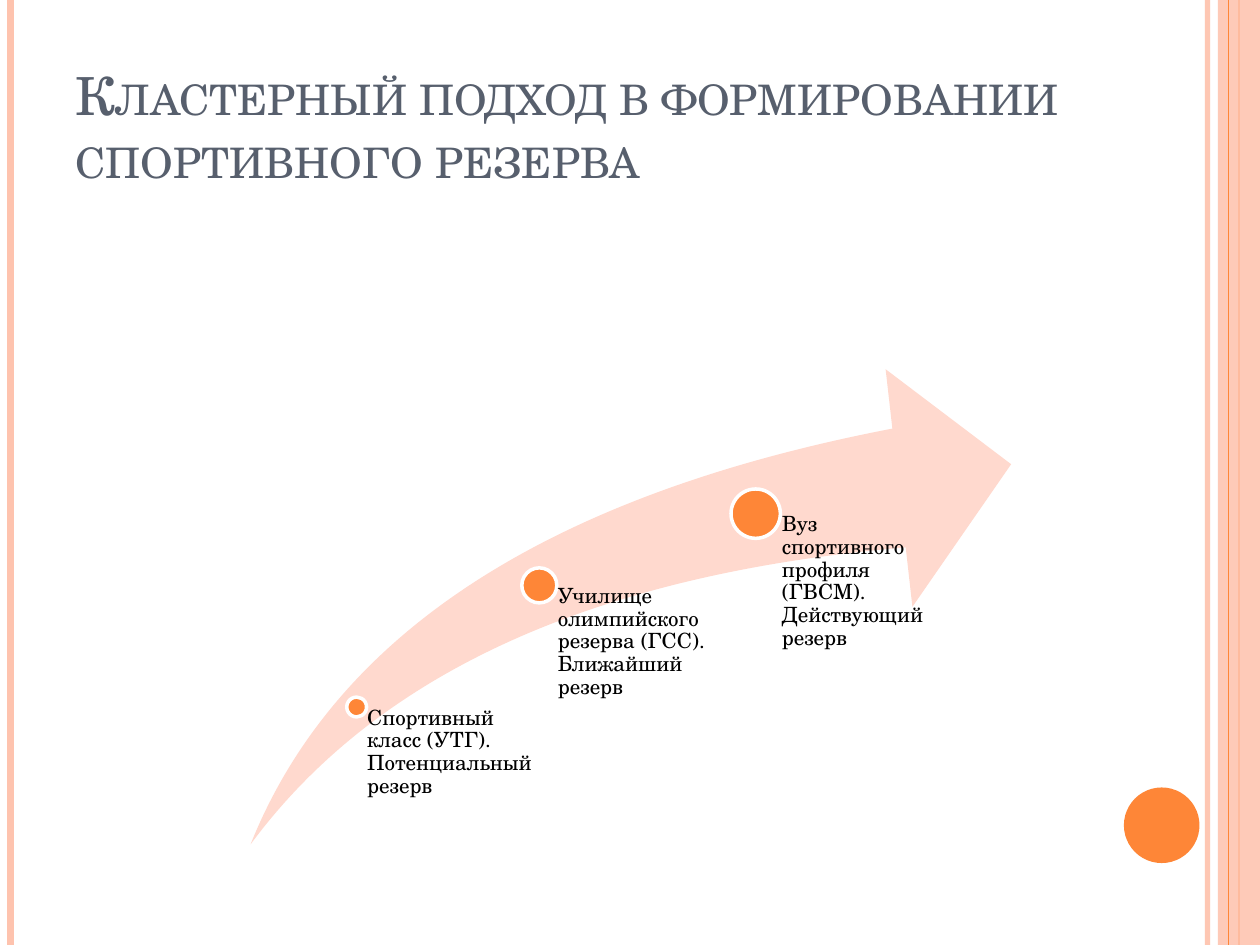
import pptx
import pptx.dml.color
import pptx.enum.shapes
import pptx.enum.text
import pptx.oxml
import pptx.oxml.ns
import pptx.oxml.xmlchemy
import pptx.util

Pt = pptx.util.Pt
RGBColor = pptx.dml.color.RGBColor
MSO_SHAPE = pptx.enum.shapes.MSO_SHAPE
qn = pptx.oxml.ns.qn

ORANGE = RGBColor(0xFE, 0x86, 0x37)
PEACH = RGBColor(0xFE, 0xC3, 0xAE)
PALE = RGBColor(0xFF, 0xD9, 0xCE)
SLATE = RGBColor(0x57, 0x5F, 0x6D)
BLACK = RGBColor(0, 0, 0)
WHITE = RGBColor(255, 255, 255)
FONT = "TeX Gyre Schola"
W, H = 720, 540

prs = pptx.Presentation()
prs.slide_width, prs.slide_height = Pt(W), Pt(H)
s = prs.slides.add_slide(prs.slide_layouts[5])


def set_alpha(sp, percent):
    """Make the first solid colour of a shape or line partly transparent."""
    clr = next(sp._element.spPr.iter(qn("a:srgbClr")))
    clr.append(pptx.oxml.parse_xml(
        '<a:alpha xmlns:a="http://schemas.openxmlformats.org/drawingml/2006/main"'
        f' val="{percent * 1000}"/>'))


def add_filled(kind, x, y, w, h, color, outline=None):
    sp = s.shapes.add_shape(kind, Pt(x), Pt(y), Pt(w), Pt(h))
    sp.shadow.inherit = False
    sp.fill.solid()
    sp.fill.fore_color.rgb = color
    if outline is None:
        sp.line.fill.background()
    else:
        sp.line.color.rgb = outline
        sp.line.width = Pt(2)
    return sp


# Side stripes; the band lies over the first three lines
stripes = [(690, PEACH, 3, 93), (6, PEACH, 4.5, 100), (708, ORANGE, 1.5, 100),
           "band", (702, ORANGE, 0.75, 100)]
for stripe in stripes:
    if stripe == "band":
        band = add_filled(MSO_SHAPE.RECTANGLE, 696, 0, 24, H, PEACH)
        set_alpha(band, 87)
        continue
    x, color, width, alpha = stripe
    line = s.shapes.add_connector(
        pptx.enum.shapes.MSO_CONNECTOR.STRAIGHT, Pt(x), 0, Pt(x), Pt(H))
    line.line.color.rgb = color
    line.line.width = Pt(width)
    line._element.spPr.append(pptx.oxml.xmlchemy.OxmlElement("a:effectLst"))
    if alpha < 100:
        set_alpha(line, alpha)

add_filled(MSO_SHAPE.OVAL, 642.25, 450, 43.2, 43.2, ORANGE)

# Rising arrow with three stages
ARROW_BOTTOM = 482.5
arrow = add_filled(MSO_SHAPE.SWOOSH_ARROW, 143.2, 211, 434.6, 271.5, PALE)
arrow.adjustments[0] = arrow.adjustments[1] = 0.25

# Dot centre, dot diameter, text width, text inset, text
stages = [
    (203.8, 404, 11.3, 101.5, 6, "Спортивный класс (УТГ). Потенциальный резерв"),
    (308.2, 334.5, 20, 104.4, 10.6, "Училище олимпийского резерва (ГСС). Ближайший резерв"),
    (431.8, 293.5, 28.2, 104.4, 15, "Вуз спортивного профиля (ГВСМ). Действующий резерв"),
]
for x, y, d, width, inset, text in stages:
    add_filled(MSO_SHAPE.OVAL, x - d / 2, y - d / 2, d, d, ORANGE, WHITE)
    box = s.shapes.add_textbox(Pt(x), Pt(y), Pt(width), Pt(ARROW_BOTTOM - y))
    tf = box.text_frame
    frame_format = {"word_wrap": True, "margin_left": Pt(inset), "margin_top": 0,
                    "margin_right": 0, "margin_bottom": 0}
    for name, value in frame_format.items():
        setattr(tf, name, value)
    p = tf.paragraphs[0]
    p.line_spacing = 0.9
    r = p.add_run()
    r.text = text
    for name, value in {"name": FONT, "size": Pt(12)}.items():
        setattr(r.font, name, value)
    r.font.color.rgb = BLACK

title = s.shapes.title
place = {"left": Pt(36), "top": Pt(21.6), "width": Pt(588), "height": Pt(90)}
for name, value in place.items():
    setattr(title, name, value)
tf = title.text_frame
tf.word_wrap = True
tf.auto_size = pptx.enum.text.MSO_AUTO_SIZE.NONE
tf.vertical_anchor = pptx.enum.text.MSO_ANCHOR.BOTTOM
p = tf.paragraphs[0]
p.alignment = pptx.enum.text.PP_ALIGN.LEFT
r = p.add_run()
r.text = "Кластерный подход в формировании спортивного резерва"
for name, value in {"name": FONT, "size": Pt(30)}.items():
    setattr(r.font, name, value)
r.font.color.rgb = SLATE
r._r.get_or_add_rPr().set("cap", "small")

prs.save("out.pptx")
